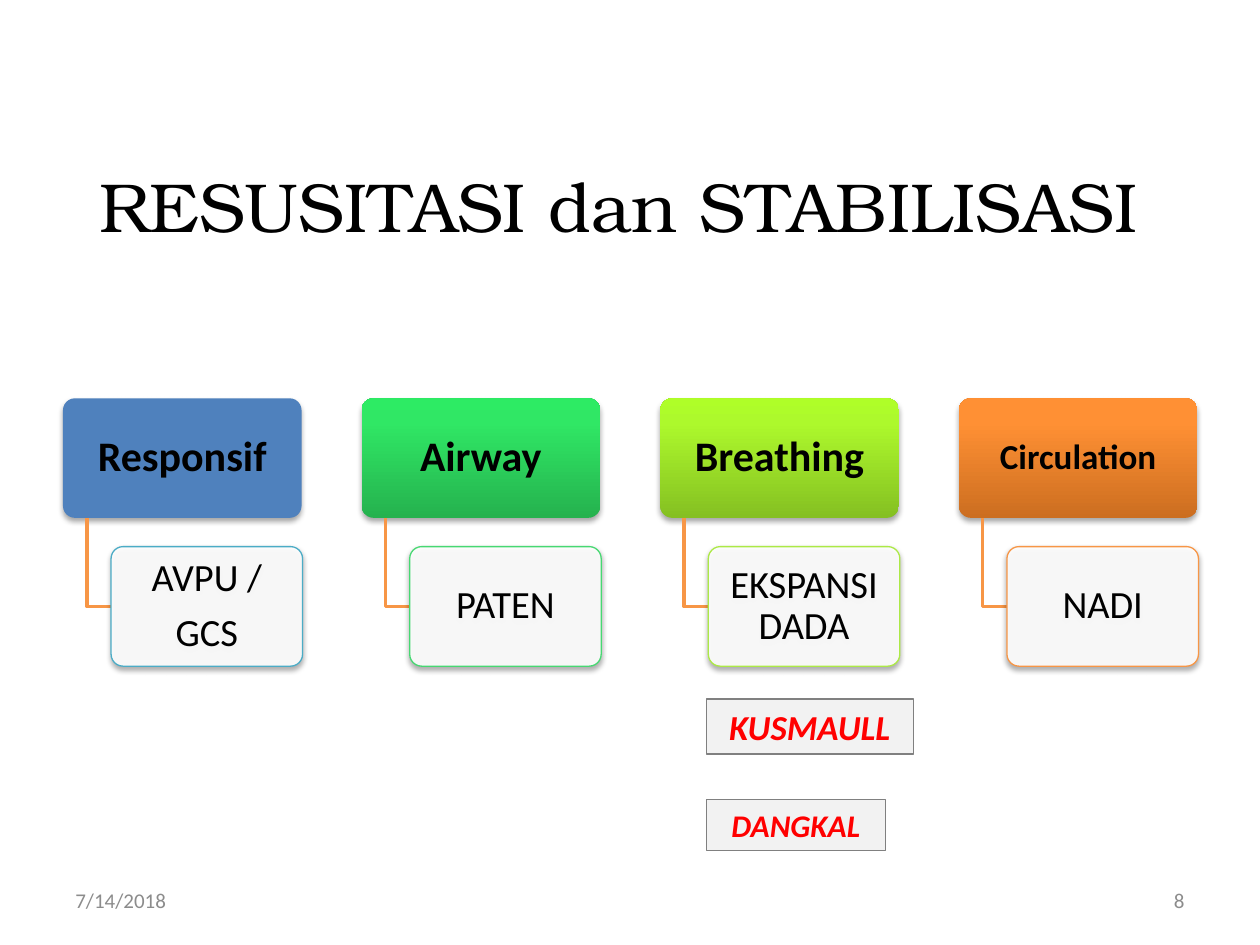
from lxml.etree import SubElement
from pptx import Presentation
from pptx.dml.color import RGBColor
from pptx.enum.shapes import MSO_SHAPE
from pptx.enum.text import MSO_ANCHOR, PP_ALIGN
from pptx.oxml.ns import qn
from pptx.util import Cm, Pt

# Column grid of the diagram, in cm
LEFT, PITCH = 1.27, 6.02
HEAD_TOP, HEAD_W, BOX_H = 8.03, 4.81, 2.41
CHILD_TOP, CHILD_W, INDENT = 11.02, 3.86, 0.97
STEM = 0.48

# Heading, heading size, fill (one colour or gradient stops), child lines, child outline
COLUMNS = [
    ("Responsif", 24, ["4F81BD"], ["AVPU /", "GCS"], "4BACC6"),
    ("Airway", 24, ["25B24E", "30E765", "2DEB64"], ["PATEN"], "47D872"),
    ("Breathing", 24, ["85C022", "ADF92C", "AFFE28"], ["EKSPANSI DADA"], "ACE946"),
    ("Circulation", 20, ["CC6E20", "FF9034", "FF9136"], ["NADI"], "F79646"),
]


def rgb(value):
    return RGBColor.from_string(value)


def style(p, size, color, align, bold=False, italic=False, name="Calibri"):
    p.alignment = align
    p.font.size, p.font.name = Pt(size), name
    p.font.bold, p.font.italic = bold, italic
    p.font.color.rgb = rgb(color)


def add_sub(parent, tag, **attrs):
    return SubElement(parent, qn(tag), {k: str(v) for k, v in attrs.items()})


def set_gradient(sp, colors):
    """Vertical gradient, from the bottom up."""
    sp.fill.gradient()
    sp.fill.gradient_angle = 90
    stops = sp.fill._fill._gradFill.find(qn("a:gsLst"))
    for gs in list(stops):
        stops.remove(gs)
    for pos, color in zip((0, 80000, 100000), colors):
        add_sub(add_sub(stops, "a:gs", pos=pos), "a:srgbClr", val=color)


def add_shadow(sp):
    sp.shadow.inherit = False
    effects = sp._element.spPr.find(qn("a:effectLst"))
    shadow = add_sub(effects, "a:outerShdw", blurRad=Pt(3.1), dist=Pt(1.8),
                     dir=5400000, rotWithShape=0)
    color = add_sub(shadow, "a:srgbClr", val="000000")
    add_sub(color, "a:alpha", val=35000)


def add_box(s, x, y, w, lines, size, colors, outline=None, bold=False):
    """Rounded, shadowed box with centred text."""
    sp = s.shapes.add_shape(MSO_SHAPE.ROUNDED_RECTANGLE, Cm(x), Cm(y), Cm(w), Cm(BOX_H))
    sp.adjustments[0] = 0.1
    if len(colors) > 1:
        set_gradient(sp, colors)
    else:
        sp.fill.solid()
        sp.fill.fore_color.rgb = rgb(colors[0])
    if outline:
        sp.line.color.rgb = rgb(outline)
        sp.line.width = Pt(0.75)
    else:
        sp.line.fill.background()
    add_shadow(sp)
    tf = sp.text_frame
    tf.word_wrap = True
    tf.vertical_anchor = MSO_ANCHOR.MIDDLE
    tf.margin_left = tf.margin_right = Cm(0.2)
    tf.margin_top = tf.margin_bottom = Cm(0.15)
    tf.text = "\n".join(lines)
    for i, p in enumerate(tf.paragraphs):
        style(p, size, "000000", PP_ALIGN.CENTER, bold)
        p.line_spacing = 0.9
        p.space_before = Pt(0.35 * size if i else 0)
    return sp


def add_elbow(s, x):
    """Open L-shaped line from a heading down to its child."""
    top, bottom = HEAD_TOP + BOX_H, CHILD_TOP + BOX_H / 2
    fb = s.shapes.build_freeform(Cm(x + STEM), Cm(top))
    fb.add_line_segments([(Cm(x + STEM), Cm(bottom)), (Cm(x + INDENT), Cm(bottom))], close=False)
    sp = fb.convert_to_shape()
    sp.fill.background()
    sp.line.color.rgb = rgb("F79646")
    sp.line.width = Pt(2)
    sp.shadow.inherit = False


def add_label(s, y, w, h, text, size):
    """Grey framed label with red text."""
    sp = s.shapes.add_shape(MSO_SHAPE.RECTANGLE, Cm(14.24), Cm(y), Cm(w), Cm(h))
    sp.fill.solid()
    sp.fill.fore_color.rgb = rgb("F2F2F2")
    sp.line.color.rgb = rgb("808080")
    sp.line.width = Pt(0.75)
    sp.shadow.inherit = False
    tf = sp.text_frame
    tf.word_wrap = False
    tf.vertical_anchor = MSO_ANCHOR.TOP
    tf.text = text
    style(tf.paragraphs[0], size, "FF0000", PP_ALIGN.CENTER, True, True)


def add_footer(s, x, text, align):
    tf = s.shapes.add_textbox(Cm(x), Cm(17.65), Cm(5.93), Cm(1.01)).text_frame
    tf.word_wrap = True
    tf.vertical_anchor = MSO_ANCHOR.MIDDLE
    tf.text = text
    style(tf.paragraphs[0], 12, "8C8C8C", align)


def add_title(s, text):
    title = s.shapes.title
    title.left, title.top, title.width, title.height = Cm(1.27), Cm(2.54), Cm(22.86), Cm(3.18)
    tf = title.text_frame
    tf.vertical_anchor = MSO_ANCHOR.MIDDLE
    tf.text = text
    style(tf.paragraphs[0], 39.6, "000000", PP_ALIGN.CENTER, name="TeX Gyre Bonum")


def main():
    prs = Presentation()
    prs.slide_width, prs.slide_height = Cm(25.4), Cm(19.05)
    s = prs.slides.add_slide(prs.slide_layouts[5])
    add_title(s, "RESUSITASI dan STABILISASI ")

    # Assessment columns: heading, elbow line, child box
    for i, (head, size, colors, lines, outline) in enumerate(COLUMNS):
        x = LEFT + i * PITCH
        add_box(s, x, HEAD_TOP, HEAD_W, [head], size, colors, bold=True)
        add_elbow(s, x)
        child = add_box(s, x + INDENT, CHILD_TOP, CHILD_W, lines, 22, ["FFFFFF"], outline)
        fill_color = child._element.spPr.find(qn("a:solidFill"))[0]
        add_sub(fill_color, "a:alpha", val=90000)

    # Breathing patterns
    add_label(s, 14.09, 4.17, 1.11, "KUSMAULL", 20)
    add_label(s, 16.12, 3.61, 1.03, "DANGKAL", 18)

    # Date and page number
    add_footer(s, 1.27, "7/14/2018", PP_ALIGN.LEFT)
    add_footer(s, 18.2, "8", PP_ALIGN.RIGHT)
    prs.save("out.pptx")


if __name__ == "__main__":
    main()
